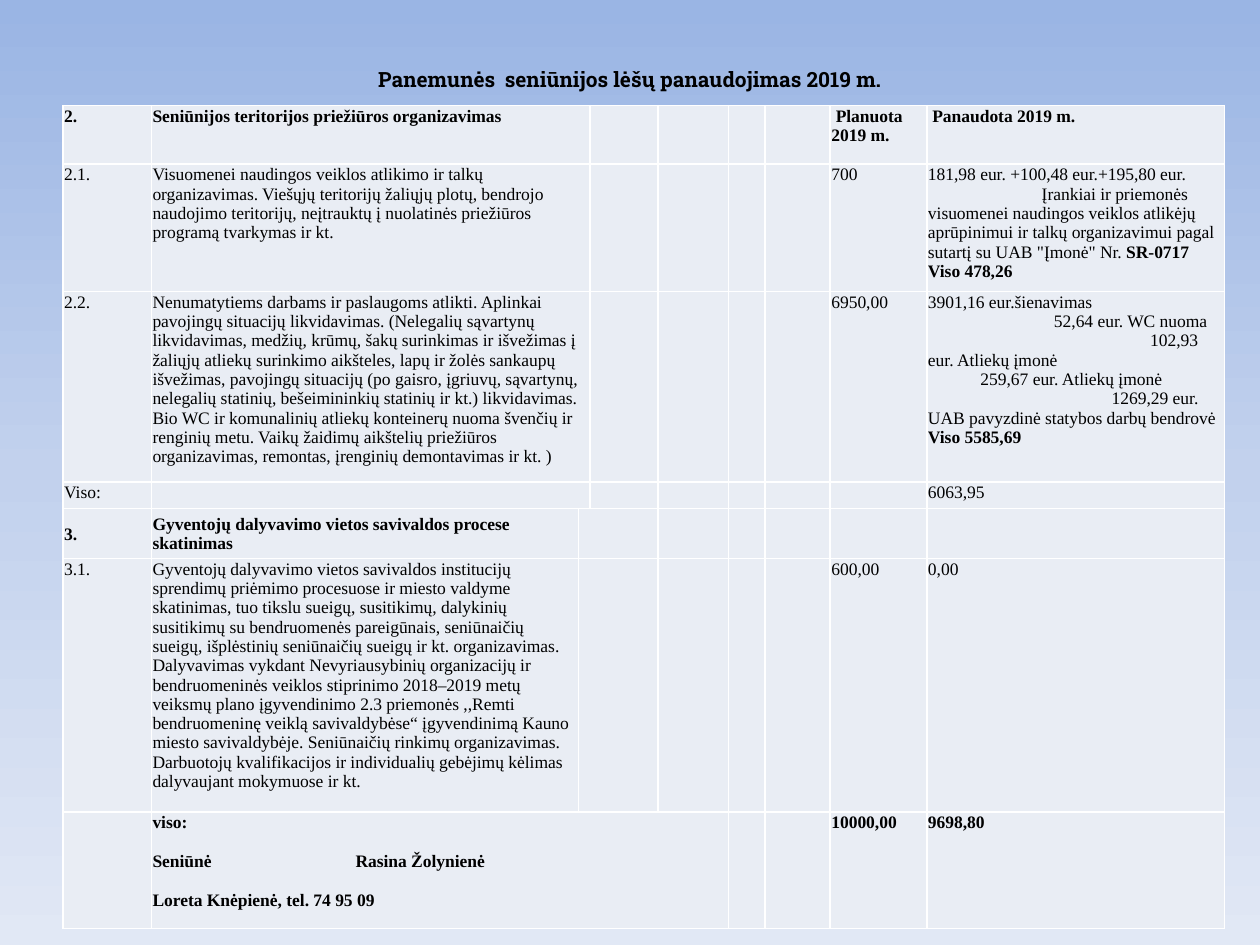
from copy import deepcopy
from dataclasses import dataclass

from lxml import etree
from pptx import Presentation
from pptx import util as u
from pptx.dml.color import RGBColor
from pptx.enum import text
from pptx.oxml.ns import qn

BODY_FONT = "Times New Roman"
TITLE_FONT = "Roboto Slab"
SIZE = 10
CELL_FILL = "E9EDF4"
PLAN, USED = 6, 7  # columns of planned and used money


@dataclass
class Line:
    """One paragraph: plain or bold text, an optional bold ending, gaps in points."""
    words: str
    bold: bool = False
    ending: str = ""
    indent: float = 0
    before: float = 0
    tab: float = 0


def color(value):
    return RGBColor.from_string(value)


def add_span(para, words, size, font, bold):
    span = para.add_run()
    span.text = words
    span.font.size = u.Pt(size)
    span.font.name = font
    span.font.bold = bold
    span.font.color.rgb = color("000000")


def paint_background(page):
    fill = page.background.fill
    fill.gradient()
    fill.gradient_angle = 270
    stop_list = page.element.find(".//" + qn("a:gsLst"))
    stop_list.insert(1, deepcopy(stop_list[0]))
    stops = [(0, "9AB5E4"), (0.5, "C2D1ED"), (1, "E1E8F5")]
    for stop, (place, value) in zip(fill.gradient_stops, stops):
        stop.position = place
        stop.color.rgb = color(value)


def add_title(page, box):
    frame = page.shapes.add_textbox(*map(u.Pt, box)).text_frame
    frame.word_wrap = True
    frame.vertical_anchor = text.MSO_ANCHOR.MIDDLE
    para = frame.paragraphs[0]
    para.alignment = text.PP_ALIGN.CENTER
    parts = [("Panemunės", 12), (" ", 22),
             ("seniūnijos lėšų panaudojimas 2019 m.", 12)]
    for words, size in parts:
        add_span(para, words, size, TITLE_FONT, True)


def add_line(para, line):
    if line.before:
        para.space_before = u.Pt(line.before)
    props = para._p.get_or_add_pPr()
    if line.indent:
        props.set("indent", str(u.Pt(line.indent)))
    if line.tab:
        tabs = etree.SubElement(props, qn("a:tabLst"))
        etree.SubElement(tabs, qn("a:tab"), pos=str(u.Pt(line.tab)), algn="l")
    add_span(para, line.words, SIZE, BODY_FONT, line.bold)
    if line.ending:
        add_span(para, line.ending, SIZE, BODY_FONT, True)


def style_cell(cell, anchor):
    cell.margin_left = cell.margin_right = cell.margin_top = u.Pt(0.7)
    cell.margin_bottom = 0
    cell.vertical_anchor = anchor
    # Borders come before the fill in the cell properties
    props = cell._tc.get_or_add_tcPr()
    for side in ("lnL", "lnR", "lnT", "lnB"):
        border = etree.SubElement(props, qn("a:" + side), w=str(u.Pt(1)))
        solid = etree.SubElement(border, qn("a:solidFill"))
        etree.SubElement(solid, qn("a:srgbClr"), val="FFFFFF")
    cell.fill.solid()
    cell.fill.fore_color.rgb = color(CELL_FILL)


def add_budget_table(page, box, widths, heights, content, middle_rows=(), merge=None):
    """Draw a table; content holds one {column: lines} for each row."""
    shape = page.shapes.add_table(len(heights), len(widths), *map(u.Pt, box))
    table = shape.table
    table.first_row = table.horz_banding = False
    for column, width in zip(table.columns, widths):
        column.width = u.Pt(width)
    for index, (row, height, entries) in enumerate(zip(table.rows, heights, content)):
        row.height = u.Pt(height)
        anchor = (text.MSO_ANCHOR.MIDDLE if index in middle_rows
                  else text.MSO_ANCHOR.TOP)
        for number, cell in enumerate(row.cells):
            style_cell(cell, anchor)
            frame = cell.text_frame
            for order, line in enumerate(entries.get(number, [])):
                para = frame.add_paragraph() if order else frame.paragraphs[0]
                add_line(para, line)
            # Keeps rows of empty cells low
            etree.SubElement(frame.paragraphs[-1]._p, qn("a:endParaRPr"),
                             sz=str(SIZE * 100))
    if merge:
        row, first, last = merge
        table.cell(row, first).merge(table.cell(row, last))


TERRITORY = [
    {0: [Line("2.", True)],
     1: [Line("Seniūnijos teritorijos priežiūros organizavimas", True)],
     PLAN: [Line("Planuota 2019 m.", True, indent=2.5)],
     USED: [Line("Panaudota 2019 m.", True, indent=2.5)]},
    {0: [Line("2.1.")],
     1: [Line("Visuomenei naudingos veiklos atlikimo ir talkų organizavimas. "
              "Viešųjų teritorijų žaliųjų plotų, bendrojo naudojimo teritorijų, "
              "neįtrauktų į nuolatinės priežiūros programą tvarkymas ir kt.")],
     PLAN: [Line("700")],
     USED: [Line("181,98 eur. +100,48 eur.+195,80 eur."),
            Line("Įrankiai ir priemonės visuomenei naudingos veiklos atlikėjų "
                 "aprūpinimui ir talkų organizavimui pagal sutartį su UAB "
                 "\"Įmonė\" Nr. ", ending="SR-0717", indent=65),
            Line("Viso 478,26", True)]},
    {0: [Line("2.2.")],
     1: [Line("Nenumatytiems darbams ir paslaugoms atlikti. Aplinkai pavojingų "
              "situacijų likvidavimas. (Nelegalių sąvartynų likvidavimas, medžių, "
              "krūmų, šakų surinkimas ir išvežimas į žaliųjų atliekų surinkimo "
              "aikšteles, lapų ir žolės sankaupų išvežimas, pavojingų situacijų "
              "(po gaisro, įgriuvų, sąvartynų, nelegalių statinių, bešeimininkių "
              "statinių ir kt.) likvidavimas. Bio WC ir komunalinių atliekų "
              "konteinerų nuoma švenčių ir renginių metu. Vaikų žaidimų aikštelių "
              "priežiūros organizavimas, remontas, įrenginių demontavimas ir kt. )")],
     PLAN: [Line("6950,00")],
     USED: [Line("3901,16 eur.šienavimas"),
            Line("52,64 eur. WC nuoma", indent=72),
            Line("102,93 eur. Atliekų įmonė", indent=127),
            Line("259,67 eur. Atliekų įmonė", indent=30),
            Line("1269,29 eur. UAB pavyzdinė statybos darbų bendrovė", indent=105),
            Line("Viso 5585,69", True)]},
    {0: [Line("Viso:")], USED: [Line("6063,95")]},
    {},
]

RESIDENTS = [
    {0: [Line("3.", True)],
     1: [Line("Gyventojų dalyvavimo vietos savivaldos procese skatinimas", True)]},
    {0: [Line("3.1.")],
     1: [Line("Gyventojų dalyvavimo vietos savivaldos institucijų sprendimų "
              "priėmimo procesuose ir miesto valdyme skatinimas, tuo tikslu "
              "sueigų, susitikimų, dalykinių susitikimų su bendruomenės "
              "pareigūnais, seniūnaičių sueigų, išplėstinių seniūnaičių sueigų ir "
              "kt. organizavimas. Dalyvavimas vykdant Nevyriausybinių organizacijų "
              "ir bendruomeninės veiklos stiprinimo 2018–2019 metų veiksmų plano "
              "įgyvendinimo 2.3 priemonės ,,Remti bendruomeninę veiklą "
              "savivaldybėse“ įgyvendinimą Kauno miesto savivaldybėje. "
              "Seniūnaičių rinkimų organizavimas. Darbuotojų kvalifikacijos ir "
              "individualių gebėjimų kėlimas dalyvaujant mokymuose ir kt.")],
     PLAN: [Line("600,00")], USED: [Line("0,00")]},
    {1: [Line("viso:", True),
         Line("Seniūnė\tRasina Žolynienė", True, before=11, tab=116),
         Line("Loreta Knėpienė, tel. 74 95 09", True, before=11)],
     PLAN: [Line("10000,00", True)], USED: [Line("9698,80", True)]},
]


def main():
    deck = Presentation()
    deck.slide_width, deck.slide_height = u.Pt(720), u.Pt(540)
    page = deck.slides.add_slide(deck.slide_layouts[6])
    paint_background(page)
    add_title(page, (36, 21.6, 648, 39))

    # The tables share all columns but the edge after the second
    shared = [40.3, 21, 37.2, 55.2, 170]
    add_budget_table(page, (36, 60.3, 664, 243), [50.5, 250.8, 38.7] + shared[:0]
                     + shared, [33.5, 67, 100, 19, 23], TERRITORY)
    add_budget_table(page, (36, 290.7, 664, 228.5), [50.5, 244.2, 45.3] + shared,
                     [28.5, 133.5, 66.5], RESIDENTS, middle_rows=(0,), merge=(2, 1, 3))
    deck.save("out.pptx")


if __name__ == "__main__":
    main()
